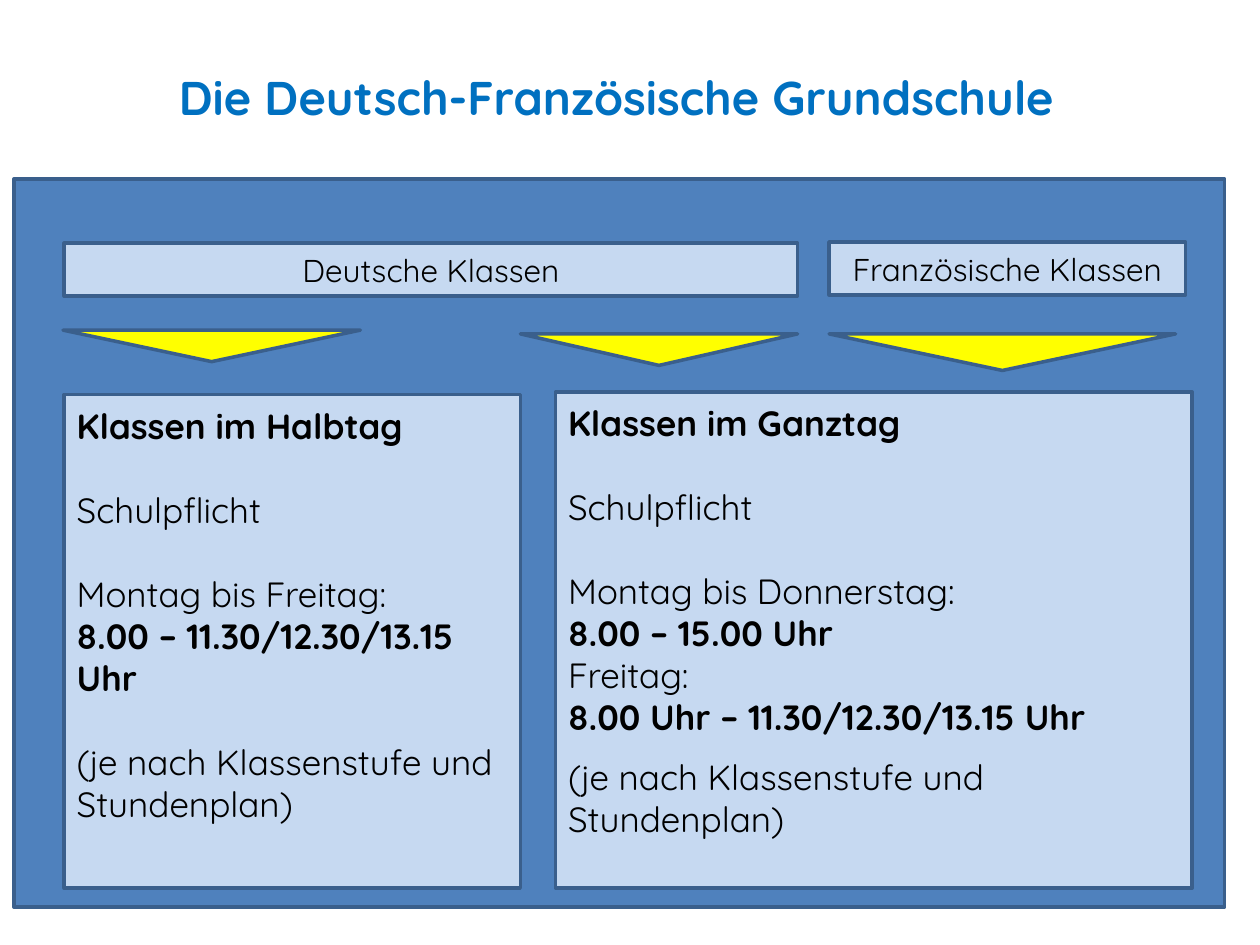
from dataclasses import dataclass

from pptx import Presentation
from pptx.dml.color import RGBColor
from pptx.enum.shapes import MSO_SHAPE
from pptx.enum.text import MSO_ANCHOR, MSO_AUTO_SIZE, PP_ALIGN
from pptx.util import Inches, Pt

COLORS = {
    "panel": "4F81BD",
    "box": "C6D9F1",
    "border": "3A5F8C",
    "arrow": "FFFF00",
    "title": "0070C0",
    "text": "000000",
}
FONT = "Quicksand"
INSETS = {
    "margin_left": Inches(0.1),
    "margin_right": Inches(0.1),
    "margin_top": Inches(0.08),
    "margin_bottom": Inches(0.05),
}


@dataclass
class Area:
    left: float
    top: float
    width: float
    height: float

    def lengths(self) -> list:
        return [Inches(v) for v in (self.left, self.top, self.width, self.height)]


@dataclass
class Line:
    text: str
    bold: bool = False
    gap: float = 0


@dataclass
class Schedule:
    area: Area
    lines: list[Line]


PANEL = Area(0.11, 1.42, 9.61, 5.78)
HEADINGS = {
    "Deutsche Klassen": Area(0.51, 1.93, 5.82, 0.42),
    "Französische Klassen": Area(6.58, 1.92, 2.83, 0.42),
}
ARROWS = [
    Area(0.5, 2.62, 2.36, 0.25),
    Area(4.13, 2.65, 2.2, 0.25),
    Area(6.58, 2.65, 2.75, 0.29),
]
SCHEDULES = [
    Schedule(Area(0.51, 3.13, 3.62, 3.92), [
        Line("Klassen im Halbtag", bold=True),
        Line("Schulpflicht", gap=24),
        Line("Montag bis Freitag:", gap=24),
        Line("8.00 – 11.30/12.30/13.15 Uhr", bold=True),
        Line("(je nach Klassenstufe und Stundenplan)", gap=24),
    ]),
    Schedule(Area(4.41, 3.11, 5.05, 3.94), [
        Line("Klassen im Ganztag", bold=True),
        Line("Schulpflicht", gap=24),
        Line("Montag bis Donnerstag:", gap=24),
        Line("8.00 – 15.00 Uhr", bold=True),
        Line("Freitag:"),
        Line("8.00 Uhr – 11.30/12.30/13.15 Uhr", bold=True),
        Line("(je nach Klassenstufe und Stundenplan)", gap=10),
    ]),
]


def style_font(font, size: float, color: str, bold: bool = False) -> None:
    values = {"name": FONT, "size": Pt(size), "bold": bold}
    for attribute, value in values.items():
        setattr(font, attribute, value)
    font.color.rgb = RGBColor.from_string(COLORS[color])


def draw_shape(slide, area: Area, fill: str, kind=MSO_SHAPE.RECTANGLE):
    shape = slide.shapes.add_shape(kind, *area.lengths())
    shape.shadow.inherit = False
    shape.fill.solid()
    shape.fill.fore_color.rgb = RGBColor.from_string(COLORS[fill])
    shape.line.color.rgb = RGBColor.from_string(COLORS["border"])
    shape.line.width = Pt(2)
    return shape


def draw_title(slide, text: str, area: Area) -> None:
    title = slide.shapes.title
    title.left, title.top, title.width, title.height = area.lengths()
    frame = title.text_frame
    frame.text = text
    frame.auto_size = MSO_AUTO_SIZE.NONE
    frame.vertical_anchor = MSO_ANCHOR.MIDDLE
    frame.paragraphs[0].alignment = PP_ALIGN.CENTER
    style_font(frame.paragraphs[0].font, 27, "title", bold=True)


def draw_heading(slide, text: str, area: Area) -> None:
    frame = draw_shape(slide, area, "box").text_frame
    frame.text = text
    frame.vertical_anchor = MSO_ANCHOR.MIDDLE
    frame.paragraphs[0].alignment = PP_ALIGN.CENTER
    style_font(frame.paragraphs[0].font, 18, "text")


def draw_schedule(slide, schedule: Schedule) -> None:
    frame = draw_shape(slide, schedule.area, "box").text_frame
    frame.word_wrap = True
    frame.vertical_anchor = MSO_ANCHOR.TOP
    for attribute, value in INSETS.items():
        setattr(frame, attribute, value)
    for index, line in enumerate(schedule.lines):
        paragraph = frame.add_paragraph() if index else frame.paragraphs[0]
        paragraph.text = line.text
        paragraph.alignment = PP_ALIGN.LEFT
        paragraph.line_spacing = Pt(24)
        if line.gap:
            paragraph.space_before = Pt(line.gap)
        style_font(paragraph.font, 20, "text", line.bold)


def main() -> None:
    presentation = Presentation()
    presentation.slide_width = Inches(10)
    presentation.slide_height = Inches(7.5)
    slide = presentation.slides.add_slide(presentation.slide_layouts[5])

    draw_title(slide, "Die Deutsch-Französische Grundschule", Area(0, 0.3, 9.78, 0.94))
    draw_shape(slide, PANEL, "panel")
    for text, area in HEADINGS.items():
        draw_heading(slide, text, area)
    for schedule in SCHEDULES:
        draw_schedule(slide, schedule)
    for area in ARROWS:
        draw_shape(slide, area, "arrow", MSO_SHAPE.ISOSCELES_TRIANGLE).rotation = 180

    presentation.save("out.pptx")


if __name__ == "__main__":
    main()
